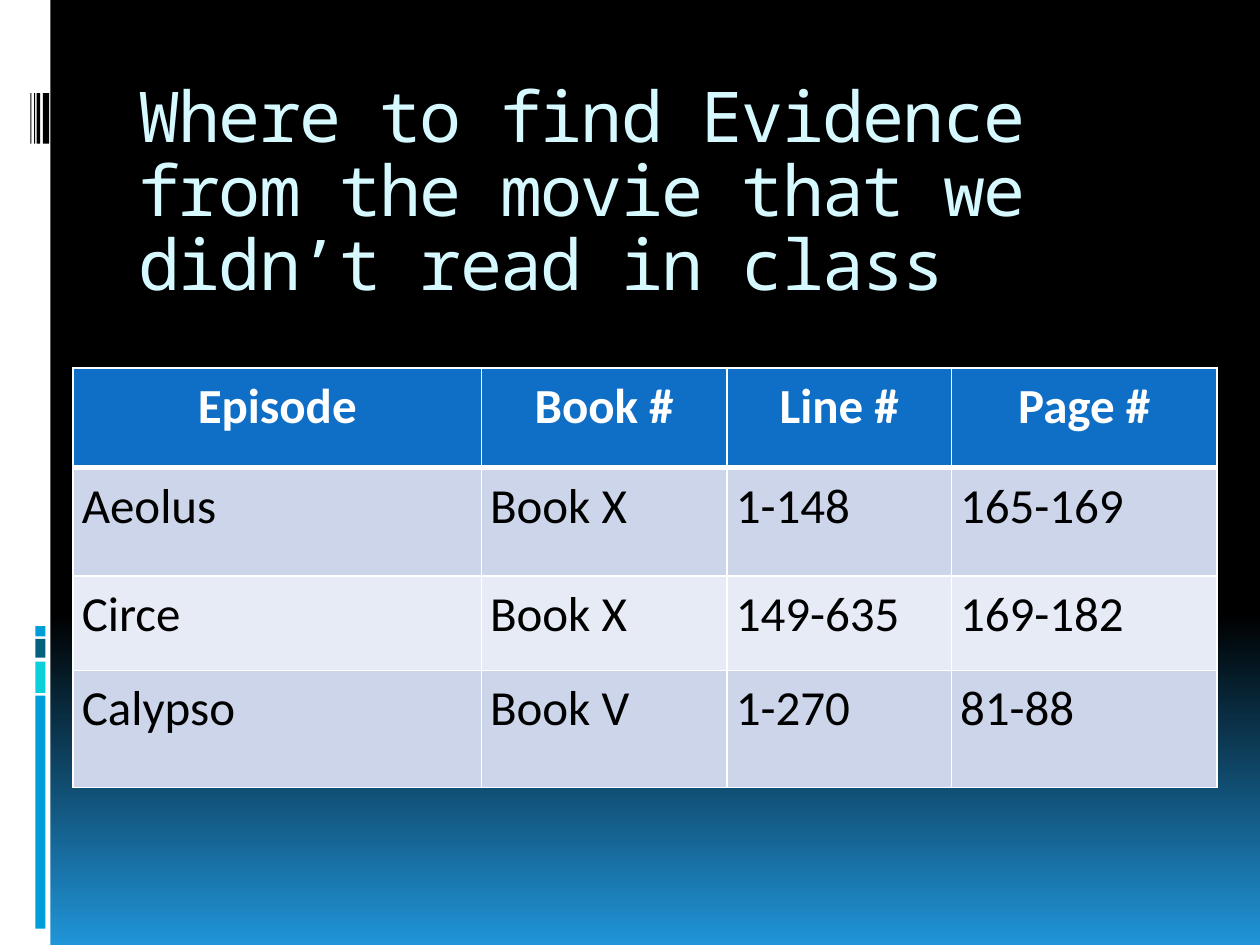
from lxml.etree import SubElement
from pptx import Presentation
from pptx.dml.color import RGBColor
from pptx.enum.shapes import MSO_SHAPE
from pptx.enum.text import MSO_ANCHOR, PP_ALIGN
from pptx.oxml import parse_xml
from pptx.oxml.ns import nsdecls
from pptx.util import Inches, Pt

COLORS = {
    "black": "000000", "white": "FFFFFF", "glow": "2095D9", "title": "D5F9FF",
    "blue": "009DD9", "cyan": "0BD0D9", "teal": "04617B",
    "header": "0F6FC6", "band": "CCD5EA", "light_band": "E7EBF5",
}
EPISODES = [
    ("Episode", "Book #", "Line #", "Page #"),
    ("Aeolus", "Book X", "1-148", "165-169"),
    ("Circe", "Book X", "149-635", "169-182"),
    ("Calypso", "Book V", "1-270", "81-88"),
]
COLUMN_WIDTHS = [3.24, 1.95, 1.78, 2.11]
ROW_HEIGHTS = [0.79, 0.86, 0.75, 0.93]


def rgb(name):
    """Return the named colour."""
    return RGBColor.from_string(COLORS[name])


def write_text(frame, text, size=28, font="Calibri", color="black", bold=False,
               align=PP_ALIGN.LEFT, line_spacing=1.15, tracking=0):
    """Write one formatted paragraph into a text frame."""
    paragraph = frame.paragraphs[0]
    paragraph.alignment = align
    paragraph.line_spacing = line_spacing
    run = paragraph.add_run()
    run.text = text
    run.font.size = Pt(size)
    run.font.name = font
    run.font.bold = bold
    run.font.color.rgb = rgb(color)
    if tracking:
        run.font._element.set("spc", str(tracking * 100))


def add_bar(slide, left, top, width, height, color):
    """Add a plain filled rectangle."""
    bar = slide.shapes.add_shape(
        MSO_SHAPE.RECTANGLE, Inches(left), Inches(top), Inches(width), Inches(height))
    bar.shadow.inherit = False
    bar.fill.solid()
    bar.fill.fore_color.rgb = rgb(color)
    bar.line.fill.background()


def paint_background(slide):
    """Fade the background from black to blue at the bottom."""
    fill = slide.background.fill
    fill.gradient()
    fill.gradient_angle = 270
    for stop, position, color in zip(fill.gradient_stops, (0.65, 1), ("black", "glow")):
        stop.position = position
        stop.color.rgb = rgb(color)


def add_side_strip(slide, left, top, width, height):
    """Add the white strip with its coloured blocks and black stripes."""
    add_bar(slide, left, top, width, height, "white")
    for offset, block_height, color in [
            (5.52, 1.85, "blue"), (5.25, 0.25, "cyan"),
            (5.07, 0.15, "teal"), (4.97, 0.08, "blue")]:
        add_bar(slide, left + 0.28, top + offset, 0.08, block_height, color)
    for offset, stripe_width in [(0.34, 0.05), (0.29, 0.03), (0.27, 0.01), (0.24, 0.01)]:
        add_bar(slide, left + offset, top + 0.74, stripe_width, 0.4, "black")


def add_title(slide, left, top, width, height):
    """Add the slide title."""
    title = slide.shapes.add_textbox(
        Inches(left), Inches(top), Inches(width), Inches(height))
    frame = title.text_frame
    frame.word_wrap = True
    frame.vertical_anchor = MSO_ANCHOR.TOP
    frame.margin_top = Inches(0.1)
    write_text(frame, "Where to find Evidence from the movie that we didn’t read in class",
               size=40, font="Noto Sans Mono", color="title", line_spacing=0.88, tracking=-1)


def set_borders(cell, **widths):
    """Draw white cell borders with the given widths in points."""
    properties = cell._tc.get_or_add_tcPr()
    for index, side in enumerate(("lnL", "lnR", "lnT", "lnB")):
        border = parse_xml(f'<a:{side} {nsdecls("a")} w="{Pt(widths.get(side, 1))}"/>')
        fill = SubElement(border, border.tag.replace(side, "solidFill"))
        SubElement(fill, border.tag.replace(side, "srgbClr"), val=COLORS["white"])
        properties.insert(index, border)


def add_episode_table(slide, left, top, width, height):
    """Add the table that lists where each episode is found."""
    table = slide.shapes.add_table(
        len(EPISODES), len(COLUMN_WIDTHS),
        Inches(left), Inches(top), Inches(width), Inches(height)).table
    for column, column_width in zip(table.columns, COLUMN_WIDTHS):
        column.width = Inches(column_width)
    for row_index, (row, row_height) in enumerate(zip(table.rows, ROW_HEIGHTS)):
        row.height = Inches(row_height)
        is_header = row_index == 0
        band = "header" if is_header else ("light_band", "band")[row_index % 2]
        for cell, text in zip(row.cells, EPISODES[row_index]):
            cell.margin_left = cell.margin_right = Inches(0.07)
            cell.margin_top = cell.margin_bottom = 0
            cell.fill.solid()
            cell.fill.fore_color.rgb = rgb(band)
            set_borders(cell, lnT=3 if row_index == 1 else 1, lnB=3 if is_header else 1)
            write_text(cell.text_frame, text, bold=is_header,
                       color="white" if is_header else "black",
                       align=PP_ALIGN.CENTER if is_header else PP_ALIGN.LEFT)


def main():
    """Build the slide and save it."""
    presentation = Presentation()
    presentation.slide_width = Inches(10)
    presentation.slide_height = Inches(7.5)
    slide = presentation.slides.add_slide(presentation.slide_layouts[6])
    paint_background(slide)
    add_side_strip(slide, 0, 0, 0.4, 7.5)
    add_title(slide, 1, 0.56, 8.5, 2.94)
    add_episode_table(slide, 0.58, 2.92, sum(COLUMN_WIDTHS), sum(ROW_HEIGHTS))
    presentation.save("out.pptx")


if __name__ == "__main__":
    main()
